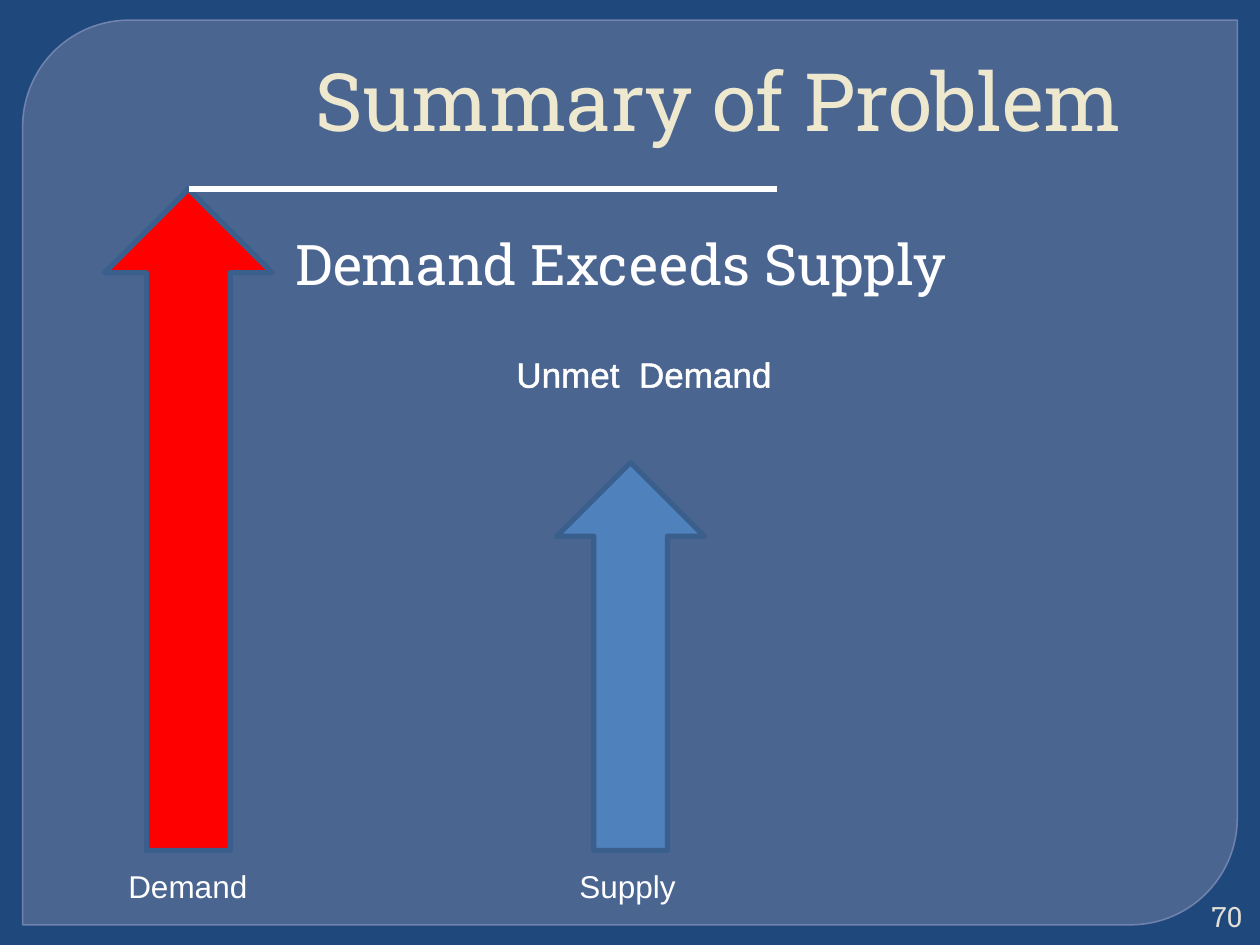
from dataclasses import dataclass

from lxml import etree
from pptx import Presentation
from pptx.dml.color import RGBColor
from pptx.enum.shapes import MSO_CONNECTOR, MSO_SHAPE
from pptx.enum.text import MSO_ANCHOR, PP_ALIGN
from pptx.oxml.ns import qn
from pptx.util import Inches, Pt

LEFT, RIGHT = PP_ALIGN.LEFT, PP_ALIGN.RIGHT
TOP, MIDDLE, BOTTOM = MSO_ANCHOR.TOP, MSO_ANCHOR.MIDDLE, MSO_ANCHOR.BOTTOM
UP_ARROW = MSO_SHAPE.UP_ARROW
PANEL = MSO_SHAPE.ROUND_2_DIAG_RECTANGLE
STRAIGHT = MSO_CONNECTOR.STRAIGHT


@dataclass(frozen=True)
class Theme:
    background: str = "1F497D"
    panel: str = "63759D"
    panel_line: str = "7989B3"
    demand: str = "FF0000"
    supply: str = "4F81BD"
    arrow_line: str = "3A5F8C"
    title: str = "EDE8CE"
    number: str = "E3E1D7"
    text: str = "FFFFFF"
    serif: str = "Roboto Slab"
    sans: str = "Arial"
    title_size: float = 46
    body_size: float = 32
    note_size: float = 20
    label_size: float = 18
    number_size: float = 16
    line_width: float = 3


@dataclass(frozen=True)
class Box:
    left: float
    top: float
    width: float
    height: float

    def lengths(self):
        return [Inches(v) for v in (self.left, self.top, self.width, self.height)]


@dataclass(frozen=True)
class Label:
    text: str
    box: Box
    size: float
    font: str
    color: str
    align: PP_ALIGN = LEFT
    anchor: MSO_ANCHOR = TOP
    wrap: bool = True
    inset: float = 0.05
    outline: float = 0


@dataclass(frozen=True)
class Arrow:
    box: Box
    color: str


THEME = Theme()
BASELINE = 6.75
LABEL_TOP = 6.83
DEMAND_TOP = 1.5

ARROWS = [
    Arrow(Box(0.83, DEMAND_TOP, 1.33, BASELINE - DEMAND_TOP), THEME.demand),
    Arrow(Box(4.42, 3.67, 1.17, BASELINE - 3.67), THEME.supply),
]
LABELS = [
    Label("70", Box(9.45, 7.12, 0.51, 0.3), THEME.number_size, THEME.serif,
          THEME.number, RIGHT, MIDDLE),
    Label("Summary of Problem", Box(0, 0.28, 9, 0.89), THEME.title_size,
          THEME.serif, THEME.title, RIGHT, BOTTOM, inset=0),
    Label("Demand Exceeds Supply", Box(2.25, 1.79, 6.75, 0.67), THEME.body_size,
          THEME.serif, THEME.text, inset=0.03),
    Label("Unmet  Demand", Box(4, 2.75, 2.24, 0.44), THEME.note_size,
          THEME.sans, THEME.text, wrap=False, outline=1.45),
    Label("Demand", Box(0.92, LABEL_TOP, 1.16, 0.4), THEME.label_size,
          THEME.sans, THEME.text, wrap=False),
    Label("Supply", Box(4.5, LABEL_TOP, 0.97, 0.4), THEME.label_size,
          THEME.sans, THEME.text, wrap=False),
]


def rgb(color: str) -> RGBColor:
    return RGBColor.from_string(color)


def set_alpha(parent, percent: int) -> None:
    color = parent.find(qn("a:solidFill")).find(qn("a:srgbClr"))
    etree.SubElement(color, qn("a:alpha"), val=str(percent * 1000))


def add_filled(s, kind: MSO_SHAPE, box: Box, fill: str, line: str, width: float):
    sp = s.shapes.add_shape(kind, *box.lengths())
    sp.shadow.inherit = False
    sp.fill.solid()
    sp.fill.fore_color.rgb = rgb(fill)
    sp.line.color.rgb = rgb(line)
    sp.line.width = Pt(width)
    return sp


def add_panel(s) -> None:
    sp = add_filled(s, PANEL, Box(0.18, 0.16, 9.64, 7.18), THEME.panel,
                    THEME.panel_line, 0.87)
    sp.adjustments[0] = 0.118
    sp.adjustments[1] = 0
    props = sp._element.spPr
    set_alpha(props, 65)
    set_alpha(props.find(qn("a:ln")), 88)


def add_outline(r, color: str, width: float) -> None:
    ln = etree.Element(qn("a:ln"), w=str(int(Pt(width))))
    fill = etree.SubElement(ln, qn("a:solidFill"))
    etree.SubElement(fill, qn("a:srgbClr"), val=color)
    r._r.get_or_add_rPr().insert(0, ln)


def add_label(s, label: Label) -> None:
    tf = s.shapes.add_textbox(*label.box.lengths()).text_frame
    tf.word_wrap = label.wrap
    tf.vertical_anchor = label.anchor
    tf.margin_top = tf.margin_bottom = Inches(label.inset)
    tf.text = label.text
    p = tf.paragraphs[0]
    p.alignment = label.align
    r = p.runs[0]
    r.font.size = Pt(label.size)
    r.font.name = label.font
    r.font.color.rgb = rgb(label.color)
    if label.outline:
        add_outline(r, label.color, label.outline)


def add_demand_line(s) -> None:
    y = Inches(DEMAND_TOP)
    line = s.shapes.add_connector(STRAIGHT, Inches(1.5), y, Inches(6.17), y)
    line.line.color.rgb = rgb(THEME.text)
    line.line.width = Pt(THEME.line_width)
    etree.SubElement(line._element.spPr, qn("a:effectLst"))


def main() -> None:
    prs = Presentation()
    prs.slide_width, prs.slide_height = Inches(10), Inches(7.5)
    s = prs.slides.add_slide(prs.slide_layouts[6])
    s.background.fill.solid()
    s.background.fill.fore_color.rgb = rgb(THEME.background)
    add_panel(s)
    for arrow in ARROWS:
        add_filled(s, UP_ARROW, arrow.box, arrow.color, THEME.arrow_line,
                   THEME.line_width)
    for label in LABELS:
        add_label(s, label)
    add_demand_line(s)
    prs.save("out.pptx")


if __name__ == "__main__":
    main()
